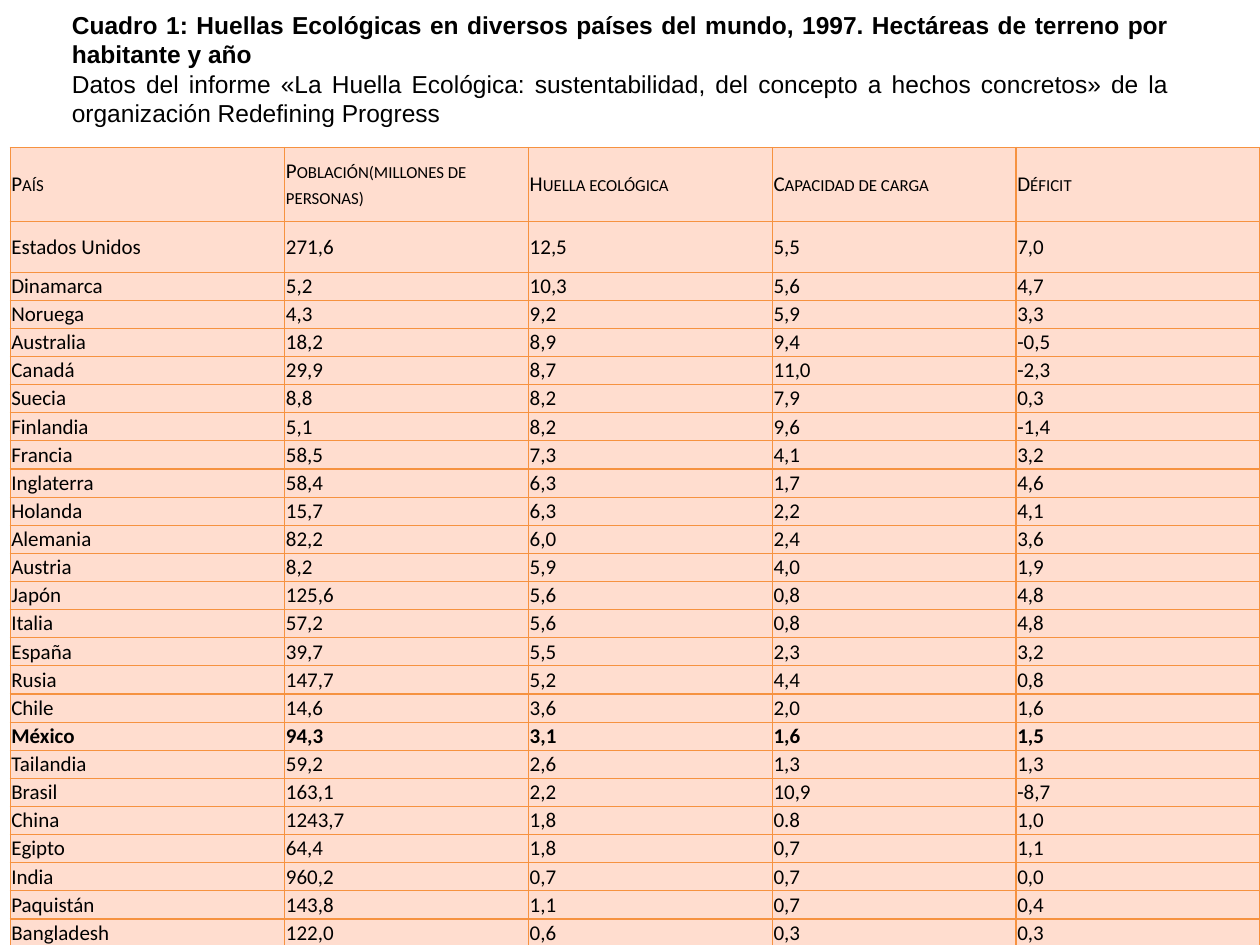
"""Build a slide with a table of ecological footprints by country."""
from lxml.etree import SubElement
from pptx import Presentation
from pptx.dml.color import RGBColor
from pptx.enum.text import MSO_ANCHOR, MSO_AUTO_SIZE, PP_ALIGN
from pptx.oxml.ns import qn
from pptx.util import Inches, Pt

BLACK = RGBColor(0x00, 0x00, 0x00)
PEACH = RGBColor(0xFF, 0xDD, 0xCF)
ORANGE = RGBColor(0xF6, 0x92, 0x40)

TITLE = (
    "Cuadro 1: Huellas Ecológicas en diversos países del mundo, 1997. "
    "Hectáreas de terreno por habitante y año",
    "Datos del informe «La Huella Ecológica: sustentabilidad, del concepto "
    "a hechos concretos» de la organización Redefining Progress",
)
HEAD = ("País", "Población(millones de personas)", "Huella ecológica",
        "Capacidad de carga", "Déficit")
DATA = (
    ("Estados Unidos", "271,6", "12,5", "5,5", "7,0"),
    ("Dinamarca", "5,2", "10,3", "5,6", "4,7"),
    ("Noruega", "4,3", "9,2", "5,9", "3,3"),
    ("Australia", "18,2", "8,9", "9,4", "-0,5"),
    ("Canadá", "29,9", "8,7", "11,0", "-2,3"),
    ("Suecia", "8,8", "8,2", "7,9", "0,3"),
    ("Finlandia", "5,1", "8,2", "9,6", "-1,4"),
    ("Francia", "58,5", "7,3", "4,1", "3,2"),
    ("Inglaterra", "58,4", "6,3", "1,7", "4,6"),
    ("Holanda", "15,7", "6,3", "2,2", "4,1"),
    ("Alemania", "82,2", "6,0", "2,4", "3,6"),
    ("Austria", "8,2", "5,9", "4,0", "1,9"),
    ("Japón", "125,6", "5,6", "0,8", "4,8"),
    ("Italia", "57,2", "5,6", "0,8", "4,8"),
    ("España", "39,7", "5,5", "2,3", "3,2"),
    ("Rusia", "147,7", "5,2", "4,4", "0,8"),
    ("Chile", "14,6", "3,6", "2,0", "1,6"),
    ("México", "94,3", "3,1", "1,6", "1,5"),
    ("Tailandia", "59,2", "2,6", "1,3", "1,3"),
    ("Brasil", "163,1", "2,2", "10,9", "-8,7"),
    ("China", "1243,7", "1,8", "0.8", "1,0"),
    ("Egipto", "64,4", "1,8", "0,7", "1,1"),
    ("India", "960,2", "0,7", "0,7", "0,0"),
    ("Paquistán", "143,8", "1,1", "0,7", "0,4"),
    ("Bangladesh", "122,0", "0,6", "0,3", "0,3"),
)


class Deck:
    """Hold the style and the current slide; lengths are percent of its size."""

    def __init__(self, wide, high):
        """Start a deck with one title-only slide."""
        self.show = Presentation()
        self.show.slide_width = Inches(wide)
        self.show.slide_height = Inches(high)
        self.slide = self.show.slides.add_slide(self.show.slide_layouts[5])

    def across(self, share):
        """Turn a percentage of the width into a length."""
        return int(self.show.slide_width * share / 100)

    def down(self, share):
        """Turn a percentage of the height into a length."""
        return int(self.show.slide_height * share / 100)

    def style(self, para, face, size, bold):
        """Set the font of a paragraph."""
        font = para.font
        font.name, font.size, font.bold = face, Pt(size), bold
        font.color.rgb = BLACK

    def title(self, lines, left, top, width, height):
        """Place the title with a bold first paragraph."""
        box = self.slide.shapes.title
        box.left, box.top = self.across(left), self.down(top)
        box.width, box.height = self.across(width), self.down(height)
        frame = box.text_frame
        frame.text = "\n".join(lines)
        frame.word_wrap = True
        frame.auto_size = MSO_AUTO_SIZE.NONE
        frame.vertical_anchor = MSO_ANCHOR.TOP
        frame.margin_top = Inches(0.08)
        for rank, para in enumerate(frame.paragraphs):
            para.alignment = PP_ALIGN.JUSTIFY
            self.style(para, "Arial", 14, rank == 0)

    def border(self, cell):
        """Draw a thin line on all four sides of a cell."""
        props = cell._tc.get_or_add_tcPr()
        for rank, side in enumerate(("a:lnL", "a:lnR", "a:lnT", "a:lnB")):
            line = props.makeelement(qn(side), {"w": str(Pt(0.75))})
            fill = SubElement(line, qn("a:solidFill"))
            SubElement(fill, qn("a:srgbClr"), val=str(ORANGE))
            props.insert(rank, line)

    def cell(self, cell, text, head, bold):
        """Fill and format one table cell."""
        cell.text = text
        cell.vertical_anchor = MSO_ANCHOR.MIDDLE
        cell.margin_left = cell.margin_right = Inches(0.01)
        cell.margin_top = cell.margin_bottom = Inches(0.01)
        cell.fill.solid()
        cell.fill.fore_color.rgb = PEACH
        self.border(cell)
        para = cell.text_frame.paragraphs[0]
        self.style(para, "Calibri", 12, bold)
        if head:
            para.font._rPr.set("cap", "small")

    def table(self, rows, left, top, cols, highs, strong):
        """Place a table with its head row and one strong row."""
        grid = self.slide.shapes.add_table(
            len(rows), len(cols), self.across(left), self.down(top),
            self.across(sum(cols)), self.down(sum(highs))).table
        for col, width in zip(grid.columns, cols):
            col.width = self.across(width)
        for rank, (row, high, texts) in enumerate(zip(grid.rows, highs, rows)):
            row.height = self.down(high)
            for cell, text in zip(row.cells, texts):
                self.cell(cell, text, rank == 0, texts[0] == strong)


def main():
    """Build and save the slide."""
    deck = Deck(10, 7.5)
    deck.title(TITLE, 4.7, 0, 89.1, 18)
    cols = [21.8] + [19.35] * 4
    highs = [7.87, 5.33] + [2.96] * (len(DATA) - 1)
    deck.table((HEAD,) + DATA, 0.8, 15.6, cols, highs, "México")
    deck.show.save("out.pptx")


if __name__ == "__main__":
    main()
